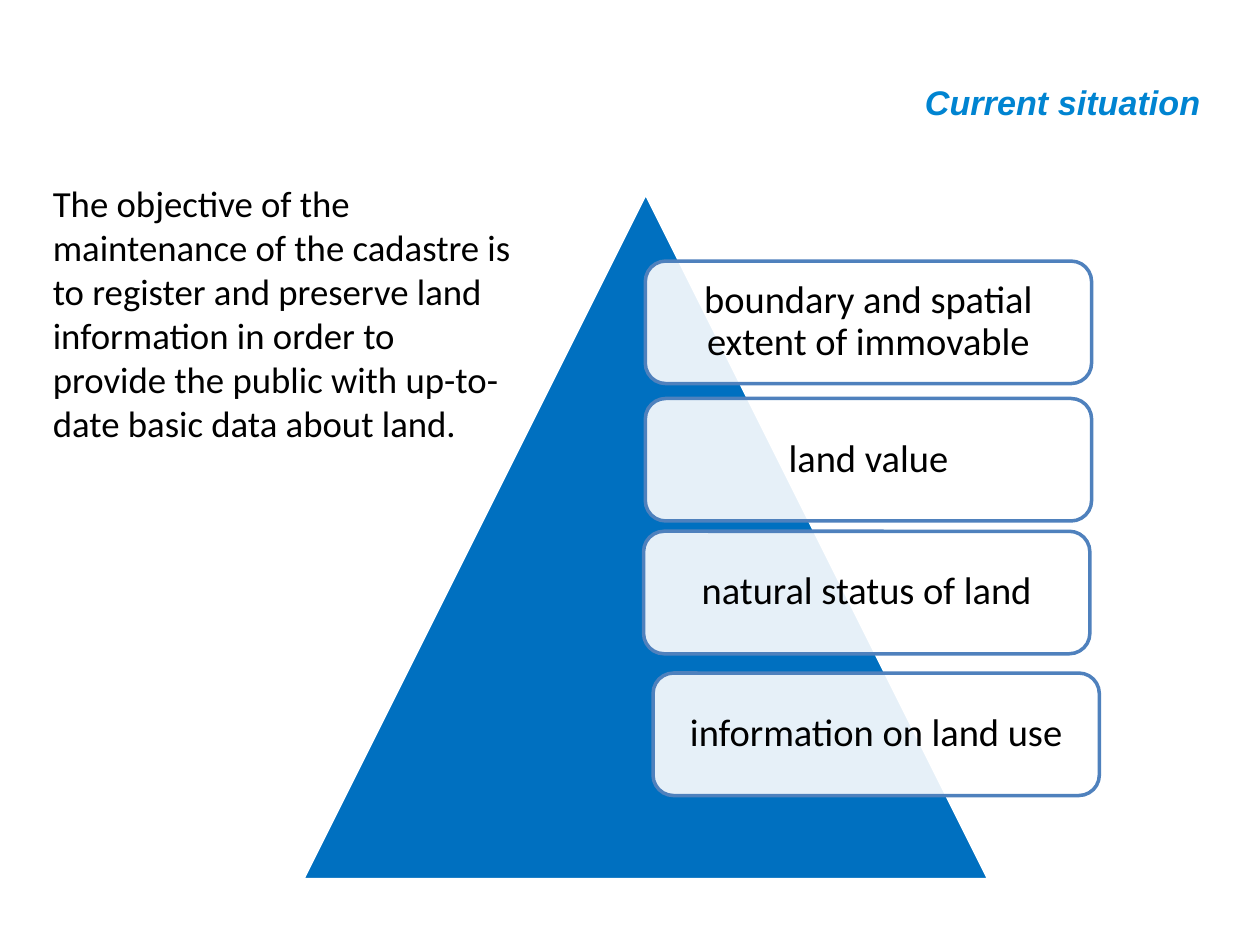
"""Build the slide on the current situation of the land cadastre."""
from dataclasses import dataclass

from lxml.etree import SubElement
from pptx import Presentation
from pptx.dml.color import RGBColor
from pptx.enum.shapes import MSO_SHAPE
from pptx.enum.text import MSO_ANCHOR, MSO_AUTO_SIZE, PP_ALIGN
from pptx.oxml.ns import qn
from pptx.util import Pt

COLORS = {
    "title": "0084D1",
    "text": "000000",
    "peak": "0070C0",
    "edge": "4F81BD",
    "white": "FFFFFF",
}
CARD_W, CARD_H = 255, 70


@dataclass
class Card:
    label: str
    left: float
    top: float


CARDS = [
    Card("boundary and spatial extent of immovable", 368.8, 149.2),
    Card("land value", 368.8, 227.7),
    Card("natural status of land", 367.8, 303.6),
    Card("information on land use", 373.2, 384.6),
]


def tint(name: str) -> RGBColor:
    return RGBColor.from_string(COLORS[name])


def place(shape, left: float, top: float, width: float, height: float) -> None:
    shape.left, shape.top = Pt(left), Pt(top)
    shape.width, shape.height = Pt(width), Pt(height)


def write(shape, text: str, size: float, face: str, color: str, align, anchor):
    frame = shape.text_frame
    frame.text = text
    frame.word_wrap = True
    frame.auto_size = MSO_AUTO_SIZE.NONE
    frame.vertical_anchor = anchor
    para = frame.paragraphs[0]
    para.alignment = align
    para.space_before = Pt(0)
    font = para.runs[0].font
    font.size, font.name = Pt(size), face
    font.color.rgb = tint(color)
    return para


def draw(slide, kind, box: tuple, fill: str, line: str):
    shape = slide.shapes.add_shape(kind, *map(Pt, box))
    shape.shadow.inherit = False
    shape.fill.solid()
    shape.fill.fore_color.rgb = tint(fill)
    shape.line.color.rgb = tint(line)
    shape.line.width = Pt(2)
    return shape


def add_card(slide, card: Card) -> None:
    box = (card.left, card.top, CARD_W, CARD_H)
    shape = draw(slide, MSO_SHAPE.ROUNDED_RECTANGLE, box, "white", "edge")
    color = shape.fill._xPr.find(qn("a:solidFill"))[0]
    SubElement(color, qn("a:alpha"), val="90000")
    para = write(shape, card.label, 22, "Calibri", "text",
                 PP_ALIGN.CENTER, MSO_ANCHOR.MIDDLE)
    para.line_spacing = 0.9
    frame = shape.text_frame
    frame.margin_left = frame.margin_right = Pt(7)
    frame.margin_top = frame.margin_bottom = Pt(7)


def main() -> None:
    deck = Presentation()
    deck.slide_width, deck.slide_height = Pt(720), Pt(540)
    slide = deck.slides.add_slide(deck.slide_layouts[1])

    title, body = slide.placeholders
    place(title, 342.7, 31.7, 350.6, 53.3)
    para = write(title, "Current situation", 19.5, "Arial", "title",
                 PP_ALIGN.RIGHT, MSO_ANCHOR.MIDDLE)
    para.runs[0].font.bold = para.runs[0].font.italic = True

    place(body, 23, 99.4, 278, 160)
    para = write(
        body,
        "The objective of the maintenance of the cadastre is to register and "
        "preserve land information in order to provide the public with "
        "up-to-date basic data about land.",
        21, "Calibri", "text", PP_ALIGN.LEFT, MSO_ANCHOR.TOP)
    props = para._p.get_or_add_pPr()
    props.set("marL", "0")
    props.set("indent", "0")
    SubElement(props, qn("a:buNone"))

    draw(slide, MSO_SHAPE.ISOSCELES_TRIANGLE, (172.8, 110.2, 392.4, 392.4),
         "peak", "white")
    for card in CARDS:
        add_card(slide, card)

    deck.save("out.pptx")


if __name__ == "__main__":
    main()
